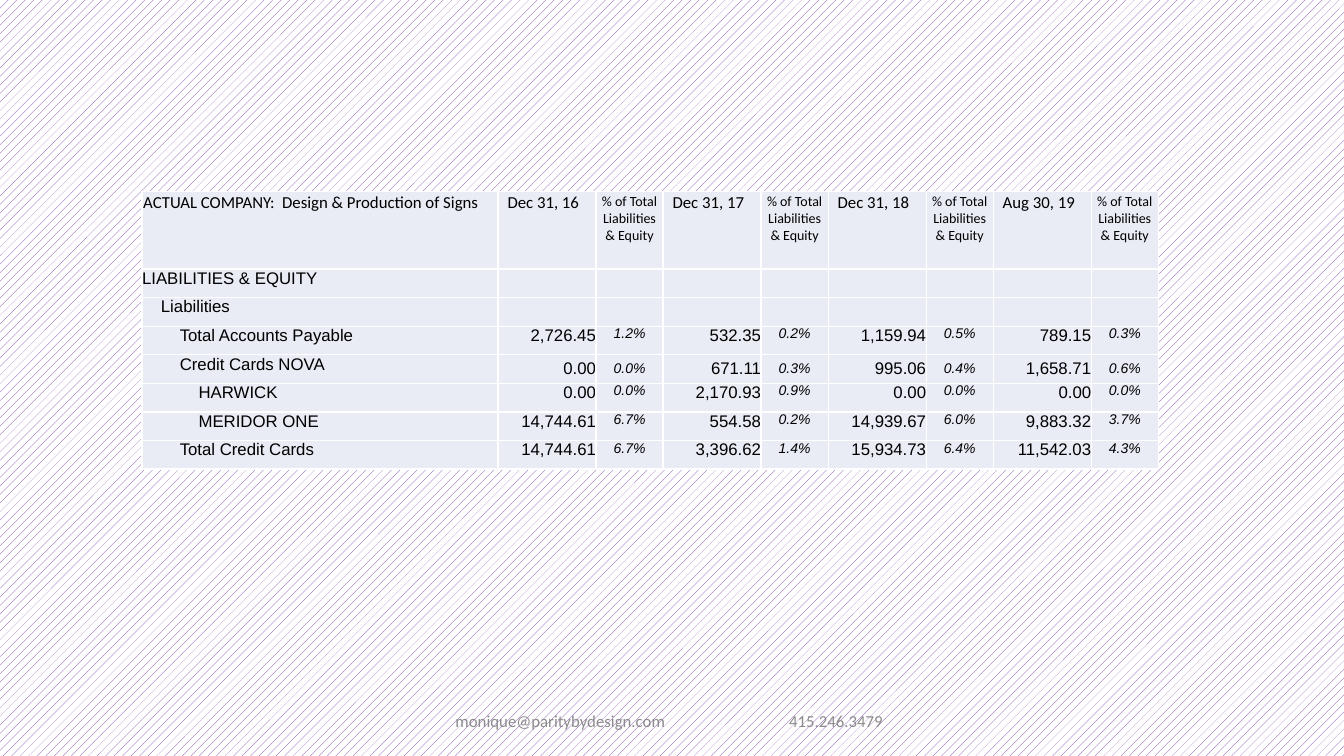
from dataclasses import dataclass

from lxml import etree
from pptx import Presentation
from pptx import util as u
from pptx.dml.color import RGBColor
from pptx.enum import dml, text
from pptx.oxml.ns import qn


@dataclass(frozen=True)
class Theme:
    stripe: str = "7030A0"
    paper: str = "FFFFFF"
    cell: str = "E9EBF5"
    ink: str = "000000"
    muted: str = "8C8C8C"
    heading_font: str = "Calibri"
    body_font: str = "Arial"
    body_size: int = 12
    small_size: int = 10
    border_width: int = 1


LEFT, CENTER, RIGHT = text.PP_ALIGN.LEFT, text.PP_ALIGN.CENTER, text.PP_ALIGN.RIGHT
TOP, MIDDLE = text.MSO_ANCHOR.TOP, text.MSO_ANCHOR.MIDDLE

# Balance sheet content
TITLE = "ACTUAL COMPANY:  Design & Production of Signs"
SHARE_HEADING = "% of Total Liabilities & Equity"
PERIODS = ["Dec 31, 16", "Dec 31, 17", "Dec 31, 18", "Aug 30, 19"]

# Label, indent level, anchor of the figures, then amount and share per period
ACCOUNTS = [
    ("LIABILITIES & EQUITY", 0, TOP, [""] * 8),
    ("Liabilities", 1, TOP, [""] * 8),
    ("Total Accounts Payable", 2, TOP,
     ["2,726.45", "1.2%", "532.35", "0.2%", "1,159.94", "0.5%", "789.15", "0.3%"]),
    ("Credit Cards NOVA", 2, MIDDLE,
     ["0.00", "0.0%", "671.11", "0.3%", "995.06", "0.4%", "1,658.71", "0.6%"]),
    ("HARWICK", 3, TOP,
     ["0.00", "0.0%", "2,170.93", "0.9%", "0.00", "0.0%", "0.00", "0.0%"]),
    ("MERIDOR ONE", 3, TOP,
     ["14,744.61", "6.7%", "554.58", "0.2%", "14,939.67", "6.0%", "9,883.32", "3.7%"]),
    ("Total Credit Cards", 2, TOP,
     ["14,744.61", "6.7%", "3,396.62", "1.4%", "15,934.73", "6.4%", "11,542.03", "4.3%"]),
]

# Table measures in centimetres
COLUMN_WIDTHS = [8.97] + [2.47, 1.69] * len(PERIODS)
ROW_HEIGHTS = [1.95] + [0.72] * len(ACCOUNTS)
INDENT = 0.475
HEADING_INSET = 0.03
PERIOD_INSET = 0.24


class SlideBuilder:
    def __init__(self, slide, theme):
        self.slide = slide
        self.theme = theme

    def background(self):
        fill = self.slide.background.fill
        fill.patterned()
        fill.pattern = dml.MSO_PATTERN.PERCENT_20
        fill.fore_color.rgb = RGBColor.from_string(self.theme.stripe)
        fill.back_color.rgb = RGBColor.from_string(self.theme.paper)

    def run(self, paragraph, words, size, font, color, italic=False):
        run = paragraph.add_run()
        run.text = words
        run.font.size = u.Pt(size)
        run.font.name = font
        run.font.italic = italic
        run.font.color.rgb = RGBColor.from_string(color)

    def table(self, left, top, widths, heights):
        frame = self.slide.shapes.add_table(
            len(heights), len(widths), u.Cm(left), u.Cm(top),
            u.Cm(sum(widths)), u.Cm(sum(heights)))
        table = frame.table
        table.first_row = False
        table.horz_banding = False
        for column, width in zip(table.columns, widths):
            column.width = u.Cm(width)
        for row, height in zip(table.rows, heights):
            row.height = u.Cm(height)
        return table

    def borders(self, cell):
        properties = cell._tc.get_or_add_tcPr()
        for side in ("lnL", "lnR", "lnT", "lnB"):
            line = etree.SubElement(properties, qn(f"a:{side}"),
                                    w=str(u.Pt(self.theme.border_width)))
            solid = etree.SubElement(line, qn("a:solidFill"))
            etree.SubElement(solid, qn("a:srgbClr"), val=self.theme.paper)

    def cell(self, cell, words, align=LEFT, anchor=TOP, inset=0, edge=0,
             font=None, size=None, italic=False):
        font = font or self.theme.body_font
        size = size or self.theme.body_size
        self.borders(cell)
        cell.fill.solid()
        cell.fill.fore_color.rgb = RGBColor.from_string(self.theme.cell)
        cell.margin_left = u.Cm(inset)
        cell.margin_right = cell.margin_top = u.Cm(edge)
        cell.margin_bottom = 0
        cell.vertical_anchor = anchor
        paragraph = cell.text_frame.paragraphs[0]
        paragraph.alignment = align
        if words:
            self.run(paragraph, words, size, font, self.theme.ink, italic)
        else:
            # Keeps an empty cell from stretching its row
            etree.SubElement(paragraph._p, qn("a:endParaRPr"), sz=str(size * 100))

    def footer(self, left, top, width, height, parts, tab):
        box = self.slide.shapes.add_textbox(
            u.Cm(left), u.Cm(top), u.Cm(width), u.Cm(height))
        frame = box.text_frame
        frame.word_wrap = True
        frame.vertical_anchor = MIDDLE
        paragraph = frame.paragraphs[0]
        paragraph.alignment = LEFT
        stops = etree.SubElement(paragraph._p.get_or_add_pPr(), qn("a:tabLst"))
        etree.SubElement(stops, qn("a:tab"), pos=str(u.Cm(tab)), algn="l")
        self.run(paragraph, "\t".join(parts), self.theme.body_size,
                 self.theme.heading_font, self.theme.muted)


def main():
    presentation = Presentation()
    presentation.slide_width = u.Cm(33.87)
    presentation.slide_height = u.Cm(19.05)
    slide = presentation.slides.add_slide(presentation.slide_layouts[6])
    theme = Theme()
    builder = SlideBuilder(slide, theme)
    builder.background()

    # Heading row
    table = builder.table(3.58, 4.83, COLUMN_WIDTHS, ROW_HEIGHTS)
    heading = {"font": theme.heading_font, "edge": HEADING_INSET}
    builder.cell(table.cell(0, 0), TITLE, inset=HEADING_INSET, **heading)
    for index, period in enumerate(PERIODS):
        column = 1 + 2 * index
        builder.cell(table.cell(0, column), period, inset=PERIOD_INSET, **heading)
        builder.cell(table.cell(0, column + 1), SHARE_HEADING, CENTER,
                     inset=HEADING_INSET, size=theme.small_size, **heading)

    # Account rows: amounts and shares alternate
    for row, (label, level, anchor, figures) in enumerate(ACCOUNTS, start=1):
        builder.cell(table.cell(row, 0), label, inset=level * INDENT)
        for column, figure in enumerate(figures, start=1):
            is_share = column % 2 == 0
            builder.cell(table.cell(row, column), figure,
                         CENTER if is_share else RIGHT, anchor,
                         size=theme.small_size if is_share else theme.body_size,
                         italic=is_share)

    # Contact line
    builder.footer(11.23, 17.65, 11.43, 1.02,
                   ["monique@paritybydesign.com", "415.246.3479"], tab=8.41)

    presentation.save("out.pptx")


if __name__ == "__main__":
    main()
